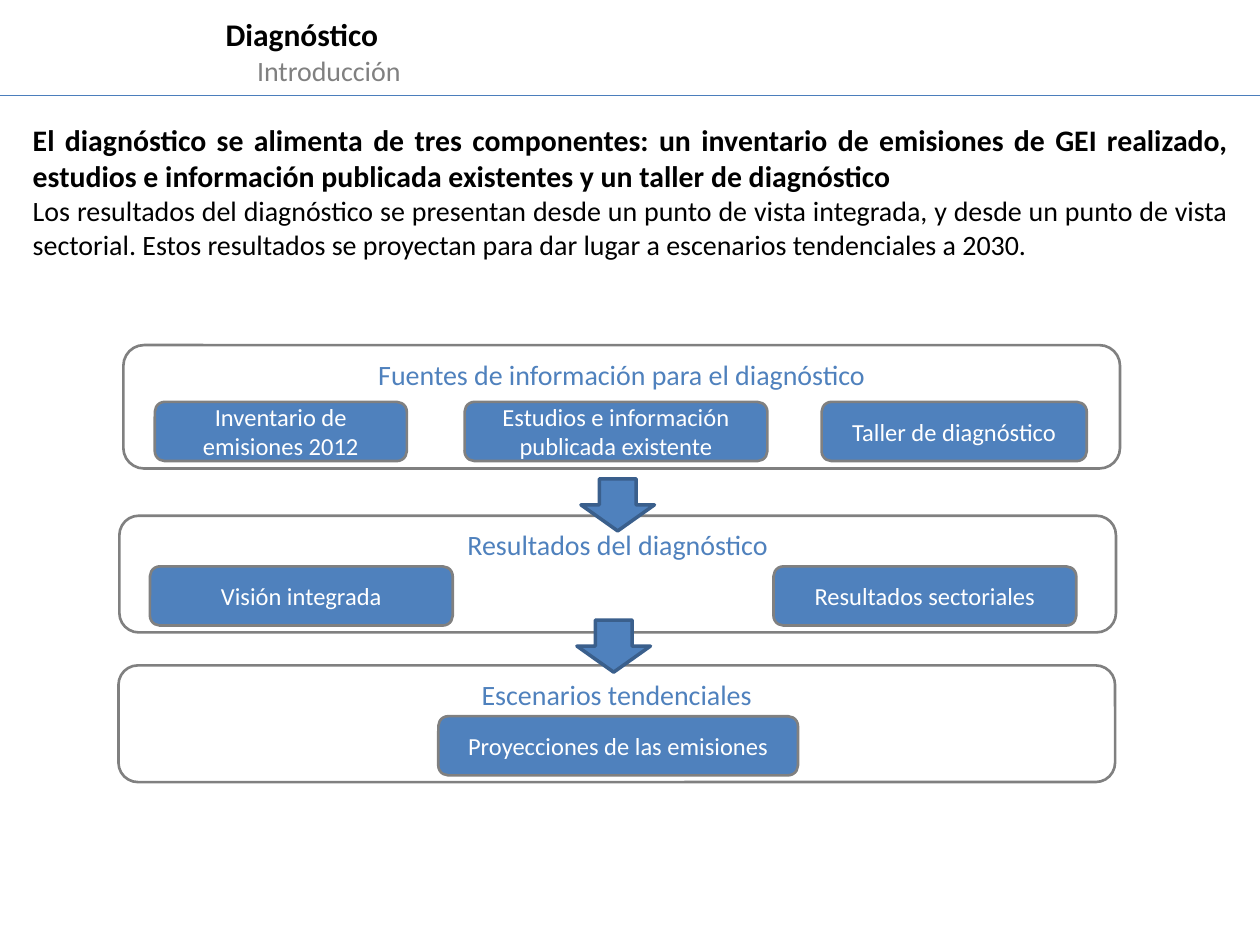
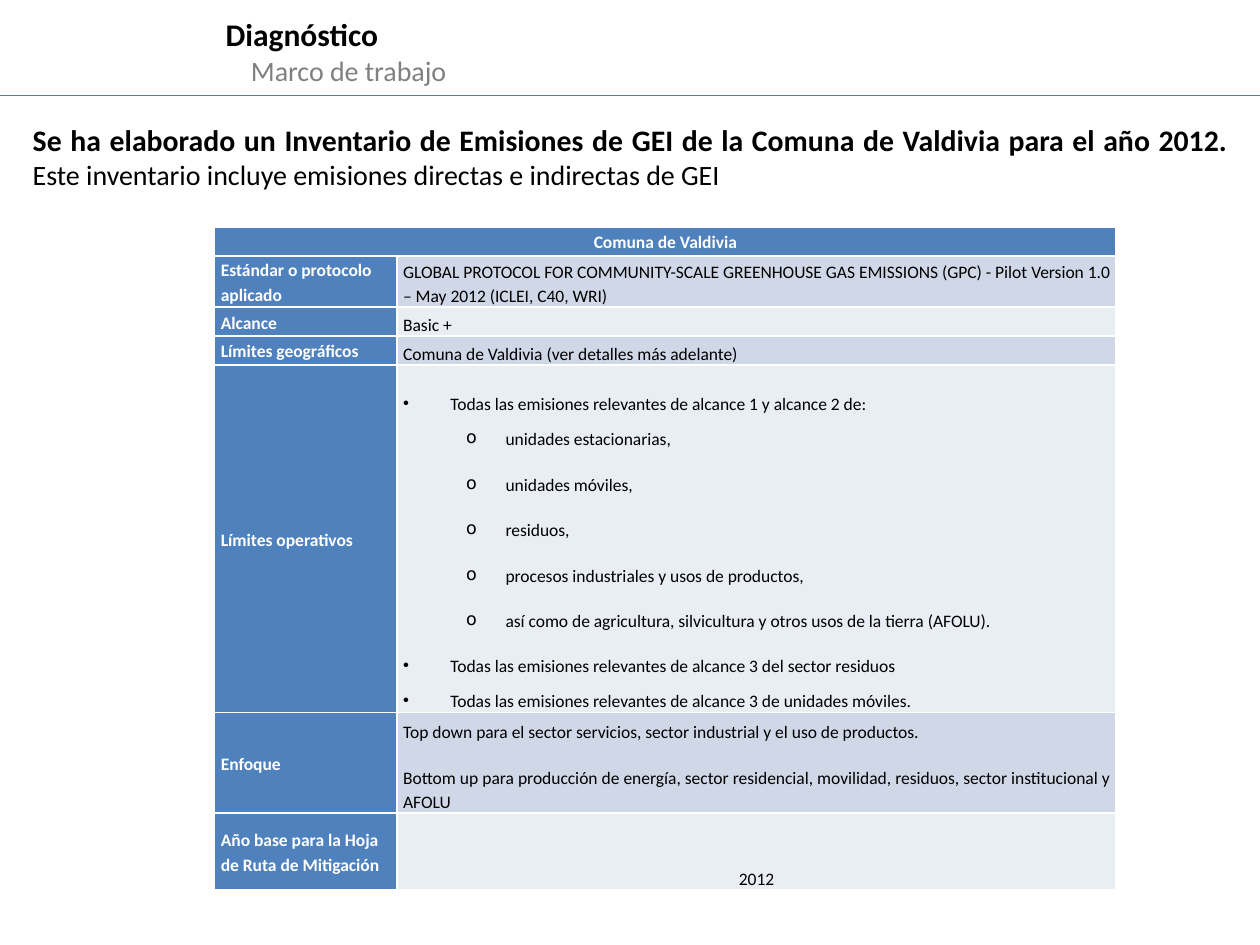
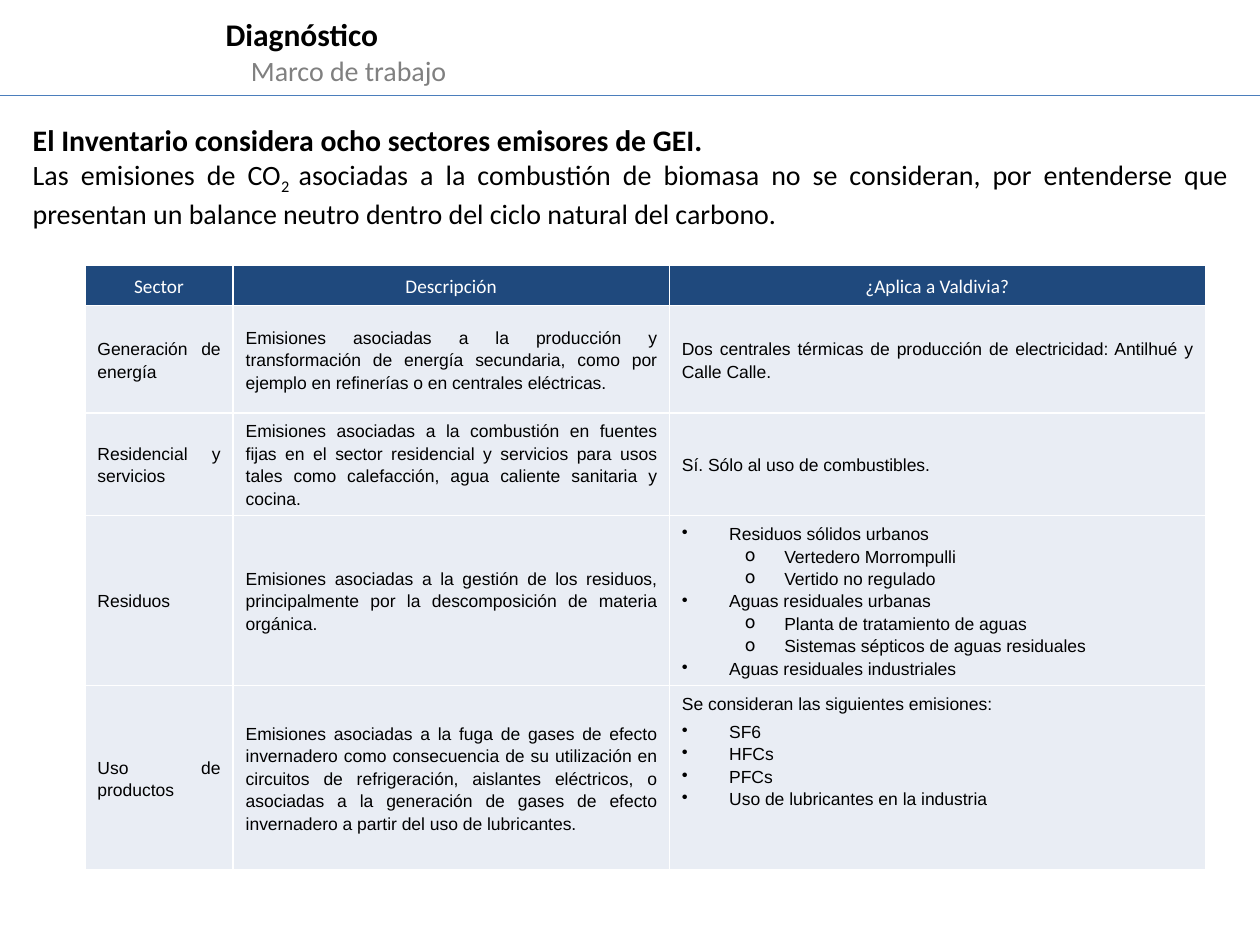
"""Build three slides on the emissions diagnosis: sources, inventory framework and sectors."""
from lxml import etree
from pptx import Presentation
from pptx import util as u
from pptx.dml import color
from pptx.enum import shapes, text
from pptx.oxml import ns

COLORS = {
    "black": "000000", "white": "FFFFFF", "gray": "808080", "blue": "4F81BD", "navy": "1F497D",
    "rule": "4B7EBC", "arrow": "3A5F8C", "band": "D0D8E8", "pale": "E9EDF4",
}
LEFT, CENTER, JUSTIFY = text.PP_ALIGN.LEFT, text.PP_ALIGN.CENTER, text.PP_ALIGN.JUSTIFY
TOP, MIDDLE, BOTTOM = text.MSO_ANCHOR.TOP, text.MSO_ANCHOR.MIDDLE, text.MSO_ANCHOR.BOTTOM
INDENTS = {"•": (27, -27), "o": (58.5, -22.5)}


def rgb(name):
    return color.RGBColor.from_string(COLORS[name])


def write(frame, words, size=16, ink="black", bold=False, font="Calibri", align=LEFT, new=True,
          bullet=None, left=0, before=0, after=0, spacing=1.0, baseline=0):
    para = frame.paragraphs[-1]
    if new:
        if para.runs:
            para = frame.add_paragraph()
        else:
            before = 0
        margin, indent = INDENTS.get(bullet, (left, 0))
        properties = para._p.get_or_add_pPr()
        properties.set("marL", str(u.Pt(margin)))
        properties.set("indent", str(u.Pt(indent)))
        if bullet:
            etree.SubElement(properties, ns.qn("a:buChar")).set("char", bullet)
        else:
            etree.SubElement(properties, ns.qn("a:buNone"))
        para.level = 1 if bullet == "o" else 0
        para.alignment, para.line_spacing = align, spacing
        para.space_before, para.space_after = u.Pt(before), u.Pt(after)
    span = para.add_run()
    span.text = words
    span.font.name, span.font.size, span.font.bold = font, u.Pt(size), bold
    span.font.color.rgb = rgb(ink)
    if baseline:
        span._r.get_or_add_rPr().set("baseline", str(baseline))


deck = Presentation()
deck.slide_width, deck.slide_height = u.Pt(720), u.Pt(540)

LEAD = dict(size=17, bold=True, align=JUSTIFY)
PLAIN = dict(align=JUSTIFY)
SAME = dict(new=False)
headings = [
    ("Introducción", 18, [
        ("El diagnóstico se alimenta de tres componentes: un inventario de emisiones de GEI realizado, "
         "estudios e información publicada existentes y un taller de diagnóstico", LEAD),
        ("Los resultados del diagnóstico se presentan desde un punto de vista integrada, y desde un punto "
         "de vista sectorial. Estos resultados se proyectan para dar lugar a escenarios tendenciales a 2030.",
         PLAIN)]),
    ("Marco de trabajo", 14.5, [
        ("Se ha elaborado un Inventario de Emisiones de GEI de la Comuna de Valdivia para el año 2012. ", LEAD),
        ("Este inventario incluye emisiones directas e indirectas de GEI", SAME)]),
    ("Marco de trabajo", 14.5, [
        ("El Inventario considera ocho sectores emisores de GEI.", LEAD),
        ("Las emisiones de CO", PLAIN),
        ("2 ", dict(new=False, baseline=-25000)),
        ("asociadas a la combustión de biomasa no se consideran, por entenderse que presentan un balance "
         "neutro dentro del ciclo natural del carbono.", SAME)]),
]
pages = []
for subtitle, subtitle_left, summary in headings:
    page = deck.slides.add_slide(deck.slide_layouts[1])
    pages.append(page)
    title, body = page.shapes.title, page.placeholders[1]
    for box, place, anchor in ((title, (121.7, 3.6, 564.5, 51), MIDDLE), (body, (11.5, 66.2, 697.7, 93), TOP)):
        box.left, box.top, box.width, box.height = map(u.Pt, place)
        frame = box.text_frame
        frame.word_wrap, frame.auto_size, frame.vertical_anchor = True, text.MSO_AUTO_SIZE.NONE, anchor
    write(title.text_frame, "Diagnóstico", size=18, bold=True)
    write(title.text_frame, subtitle, ink="gray", left=subtitle_left)
    for words, style in summary:
        write(body.text_frame, words, **style)
    rule = page.shapes.add_connector(shapes.MSO_CONNECTOR.STRAIGHT, 0, u.Pt(54.7), deck.slide_width, u.Pt(54.7))
    rule.line.color.rgb, rule.line.width = rgb("rule"), u.Pt(0.75)
    etree.SubElement(rule._element.spPr, ns.qn("a:effectLst"))

sources_page, framework_page, sectors_page = pages

ROUNDED, ARROW = shapes.MSO_SHAPE.ROUNDED_RECTANGLE, shapes.MSO_SHAPE.DOWN_ARROW
stages = [
    ("Fuentes de información para el diagnóstico", (70.5, 197.2, 569.5, 70.5), None, 229.7, [
        ("Inventario de emisiones 2012", 88.5, 144),
        ("Estudios e información publicada existente", 265.5, 173),
        ("Taller de diagnóstico", 469.5, 151.5)]),
    ("Resultados del diagnóstico", (68.2, 294.7, 569.5, 66.7), (332, 273.6), 323.7, [
        ("Visión integrada", 85.7, 173),
        ("Resultados sectoriales", 442, 173)]),
    ("Escenarios tendenciales", (67.7, 380.2, 569.5, 66.7), (329.7, 354.3), 409.3, [
        ("Proyecciones de las emisiones", 250.5, 205.5)]),
]
for name, place, arrow_corner, step_top, steps in stages:
    parts = [(ROUNDED, place, name, "white", "gray", 1.5, TOP, 16, "blue")]
    for label, left, width in steps:
        parts.append((ROUNDED, (left, step_top, width, 33.8), label, "blue", "gray", 1.5, MIDDLE, 14, "white"))
    if arrow_corner:
        parts.append((ARROW, (*arrow_corner, 42, 29.8), "", "blue", "arrow", 2, MIDDLE, 14, "white"))
    for kind, spot, label, fill, edge, weight, anchor, size, ink in parts:
        box = sources_page.shapes.add_shape(kind, *map(u.Pt, spot))
        box.shadow.inherit = False
        box.fill.solid()
        box.fill.fore_color.rgb = rgb(fill)
        box.line.color.rgb, box.line.width = rgb(edge), u.Pt(weight)
        box.text_frame.word_wrap, box.text_frame.vertical_anchor = True, anchor
        if label:
            write(box.text_frame, label, size=size, ink=ink, align=CENTER)

framework_rows = [
    ["Comuna de Valdivia", ""],
    ["Estándar o protocolo aplicado",
     "GLOBAL PROTOCOL FOR COMMUNITY-SCALE GREENHOUSE GAS EMISSIONS (GPC) - Pilot Version 1.0 – May 2012 "
     "(ICLEI, C40, WRI)"],
    ["Alcance", "Basic +"],
    ["Límites geográficos", "Comuna de Valdivia (ver detalles más adelante)"],
    ["Límites operativos",
     "• Todas las emisiones relevantes de alcance 1 y alcance 2 de:\n"
     "o unidades estacionarias,\n"
     "o unidades móviles,\n"
     "o residuos,\n"
     "o procesos industriales y usos de productos,\n"
     "o así como de agricultura, silvicultura y otros usos de la tierra (AFOLU).\n"
     "• Todas las emisiones relevantes de alcance 3 del sector residuos\n"
     "• Todas las emisiones relevantes de alcance 3 de unidades móviles."],
    ["Enfoque",
     "Top down para el sector servicios, sector industrial y el uso de productos.\n"
     "Bottom up para producción de energía, sector residencial, movilidad, residuos, sector institucional y AFOLU"],
    ["Año base para la Hoja de Ruta de Mitigación", "2012"],
]
sector_rows = [
    ["Sector", "Descripción", "¿Aplica a Valdivia?"],
    ["Generación de energía",
     "Emisiones asociadas a la producción y transformación de energía secundaria, como por ejemplo en "
     "refinerías o en centrales eléctricas.",
     "Dos centrales térmicas de producción de electricidad: Antilhué y Calle Calle."],
    ["Residencial y servicios",
     "Emisiones asociadas a la combustión en fuentes fijas en el sector residencial y servicios para usos "
     "tales como calefacción, agua caliente sanitaria y cocina.",
     "Sí. Sólo al uso de combustibles."],
    ["Residuos",
     "Emisiones asociadas a la gestión de los residuos, principalmente por la descomposición de materia orgánica.",
     "• Residuos sólidos urbanos\n"
     "o Vertedero Morrompulli\n"
     "o Vertido no regulado\n"
     "• Aguas residuales urbanas\n"
     "o Planta de tratamiento de aguas\n"
     "o Sistemas sépticos de aguas residuales\n"
     "• Aguas residuales industriales"],
    ["Uso de productos",
     "Emisiones asociadas a la fuga de gases de efecto invernadero como consecuencia de su utilización en "
     "circuitos de refrigeración, aislantes eléctricos, o asociadas a la generación de gases de efecto "
     "invernadero a partir del uso de lubricantes.",
     "Se consideran las siguientes emisiones:\n"
     "• SF6\n"
     "• HFCs\n"
     "• PFCs\n"
     "• Uso de lubricantes en la industria"],
]
tables = [
    (framework_page, framework_rows, (122.6, 129.7), (104.2, 411), (16.5, 29.3, 16.5, 16.5, 198.7, 57.5, 44), 6, 6),
    (sectors_page, sector_rows, (48.5, 151.4), (84.7, 249.3, 306.3), (23.3, 61.3, 58.5, 97.2, 105.4), 3, 0),
]
for page, rows, corner, widths, heights, gap, after in tables:
    framework = page is framework_page
    place = (*corner, sum(widths), sum(heights))
    table = page.shapes.add_table(len(rows), len(widths), *map(u.Pt, place)).table
    table.first_row, table.horz_banding = framework, False
    for column, width in zip(table.columns, widths):
        column.width = u.Pt(width)
    for row, height in zip(table.rows, heights):
        row.height = u.Pt(height)
    for r, row in enumerate(rows):
        for c, content in enumerate(row):
            cell = table.cell(r, c)
            head = r == 0 or (framework and c == 0)
            if framework:
                margins, anchor = (3.6, 0), MIDDLE if head else BOTTOM
                fill = "blue" if head else ("band" if r % 2 else "pale")
                align = CENTER if r == 0 or content == "2012" else (LEFT if head else JUSTIFY)
            else:
                margins, anchor = (0.7, 0.7) if head else (7.2, 3.6), MIDDLE
                fill = "navy" if head else "pale"
                align = CENTER if head else JUSTIFY
                if (r, c) == (len(rows) - 1, 2):
                    anchor = TOP
            cell.margin_left = cell.margin_right = u.Pt(margins[0])
            cell.margin_top = cell.margin_bottom = u.Pt(margins[1])
            cell.vertical_anchor = anchor
            cell.fill.solid()
            cell.fill.fore_color.rgb = rgb(fill)
            previous = None
            for line in content.splitlines():
                bullet = line[0] if line[:2] in ("• ", "o ") else None
                write(cell.text_frame, line[2:] if bullet else line, size=11 if head and not framework else 10,
                      ink="white" if head else "black", bold=head and framework,
                      font="Calibri" if head or framework else "Arial", align=align, bullet=bullet,
                      before=gap if framework or not previous else 0,
                      after=0 if bullet == "•" else after, spacing=1.15)
                previous = bullet
    if framework:
        table.cell(0, 0).merge(table.cell(0, 1))

deck.save("out.pptx")
